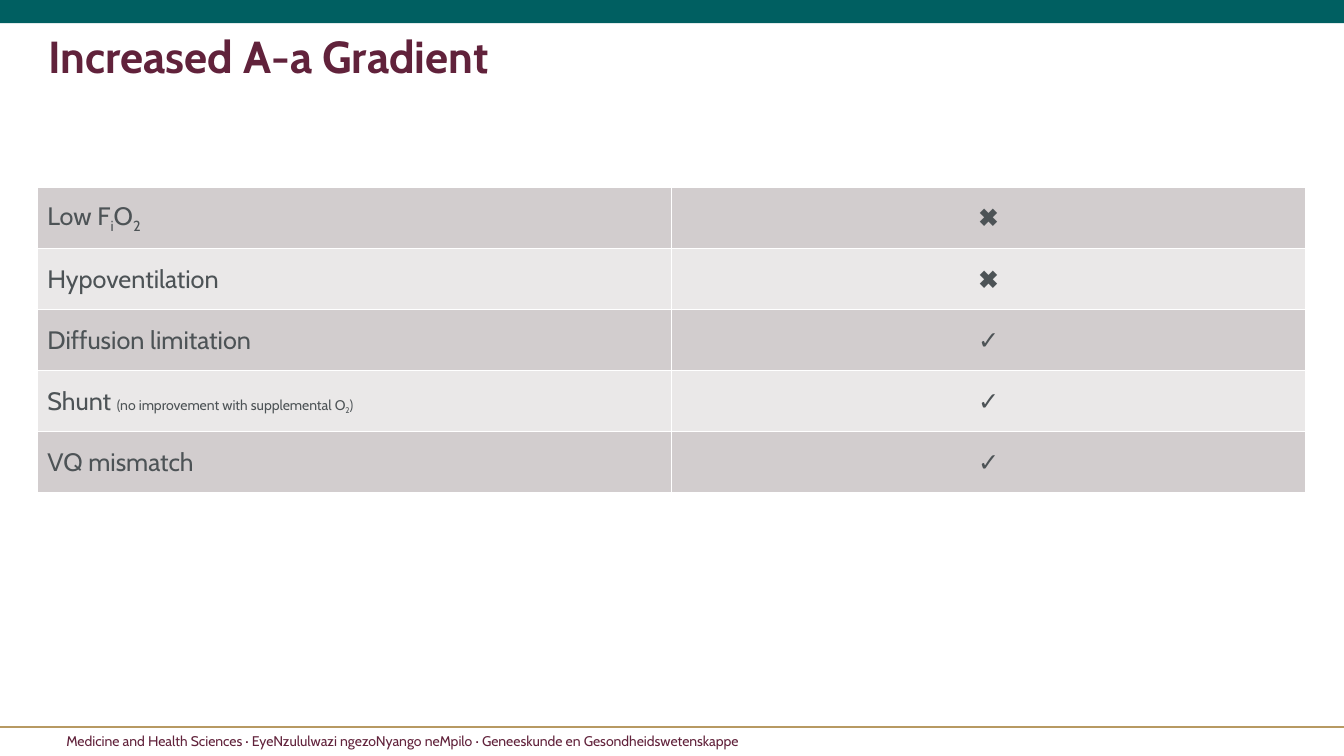
import pptx
import pptx.util
import pptx.dml.color
import pptx.enum.shapes
import pptx.enum.text
import pptx.oxml.ns
from lxml import etree

Inches, Pt = pptx.util.Inches, pptx.util.Pt
qn = pptx.oxml.ns.qn
COLORS = {name: pptx.dml.color.RGBColor.from_string(value) for name, value in {
    "maroon": "61223B", "teal": "005F61", "gold": "B79962", "text": "4D5356",
    "dark_band": "D2CDCE", "light_band": "EAE8E8", "white": "FFFFFF"}.items()}


def style(font, size, color, bold=False):
    font.name, font.size, font.bold = "Cabin", Pt(size), bold
    font.color.rgb = COLORS[color]


def add_text(left, top, width, height, text, size, bold=False):
    tf = s.shapes.add_textbox(Inches(left), Inches(top), Inches(width), Inches(height)).text_frame
    tf.word_wrap = True
    p = tf.paragraphs[0]
    p.text = text
    style(p.font, size, "maroon", bold)
    return p


prs = pptx.Presentation()
prs.slide_width, prs.slide_height = Inches(13.33), Inches(7.5)
s = prs.slides.add_slide(prs.slide_layouts[6])

# Top band, footer rule and footer
band = s.shapes.add_shape(pptx.enum.shapes.MSO_SHAPE.RECTANGLE, 0, 0, Inches(13.33), Inches(0.23))
band.shadow.inherit = False
band.fill.solid()
band.fill.fore_color.rgb = COLORS["teal"]
band.line.fill.background()

rule = s.shapes.add_connector(pptx.enum.shapes.MSO_CONNECTOR.STRAIGHT,
                              0, Inches(7.21), Inches(13.33), Inches(7.21))
rule.line.color.rgb = COLORS["gold"]
rule.line.width = Pt(1.5)
etree.SubElement(rule.element.spPr, qn("a:effectLst"))

add_text(0.56, 7.22, 12.17, 0.29,
         "Medicine and Health Sciences · EyeNzululwazi ngezoNyango neMpilo · "
         "Geneeskunde en Gesondheidswetenskappe", 10)
title = add_text(0.38, 0.3, 12.57, 1.11, "Increased A-a Gradient", 32, bold=True)
title.line_spacing = 0.9

# Each cause is a list of (text, size, subscript) runs, followed by its mark
rows = [
    ([("Low F", 18, False), ("i", 18, True), ("O", 18, False), ("2", 18, True)], "✖"),
    ([("Hypoventilation", 18, False)], "✖"),
    ([("Diffusion limitation", 18, False)], "✓"),
    ([("Shunt ", 18, False), ("(no improvement with supplemental O", 10, False),
      ("2", 10, True), (")", 10, False)], "✓"),
    ([("VQ mismatch", 18, False)], "✓"),
]
table = s.shapes.add_table(len(rows), 2, Inches(0.37), Inches(1.86),
                           Inches(12.58), Inches(3.03)).table
table.first_row = table.horz_banding = False

for i, (cause, mark) in enumerate(rows):
    for j, runs in enumerate([cause, [(mark, 18, False)]]):
        cell = table.cell(i, j)
        cell.vertical_anchor = pptx.enum.text.MSO_ANCHOR.MIDDLE
        tcPr = cell._tc.get_or_add_tcPr()
        for side in ("lnL", "lnR", "lnT", "lnB"):
            ln = etree.SubElement(tcPr, qn("a:" + side), w=str(Pt(1)))
            fill = etree.SubElement(ln, qn("a:solidFill"))
            etree.SubElement(fill, qn("a:srgbClr"), val=str(COLORS["white"]))
        cell.fill.solid()
        cell.fill.fore_color.rgb = COLORS["light_band" if i % 2 else "dark_band"]
        p = cell.text_frame.paragraphs[0]
        if j == 1:
            p.alignment = pptx.enum.text.PP_ALIGN.CENTER
        for text, size, subscript in runs:
            r = p.add_run()
            r.text = text
            style(r.font, size, "text", bold=text == "✓")
            if subscript:
                r.font._element.set("baseline", "-25000")

prs.save("out.pptx")
